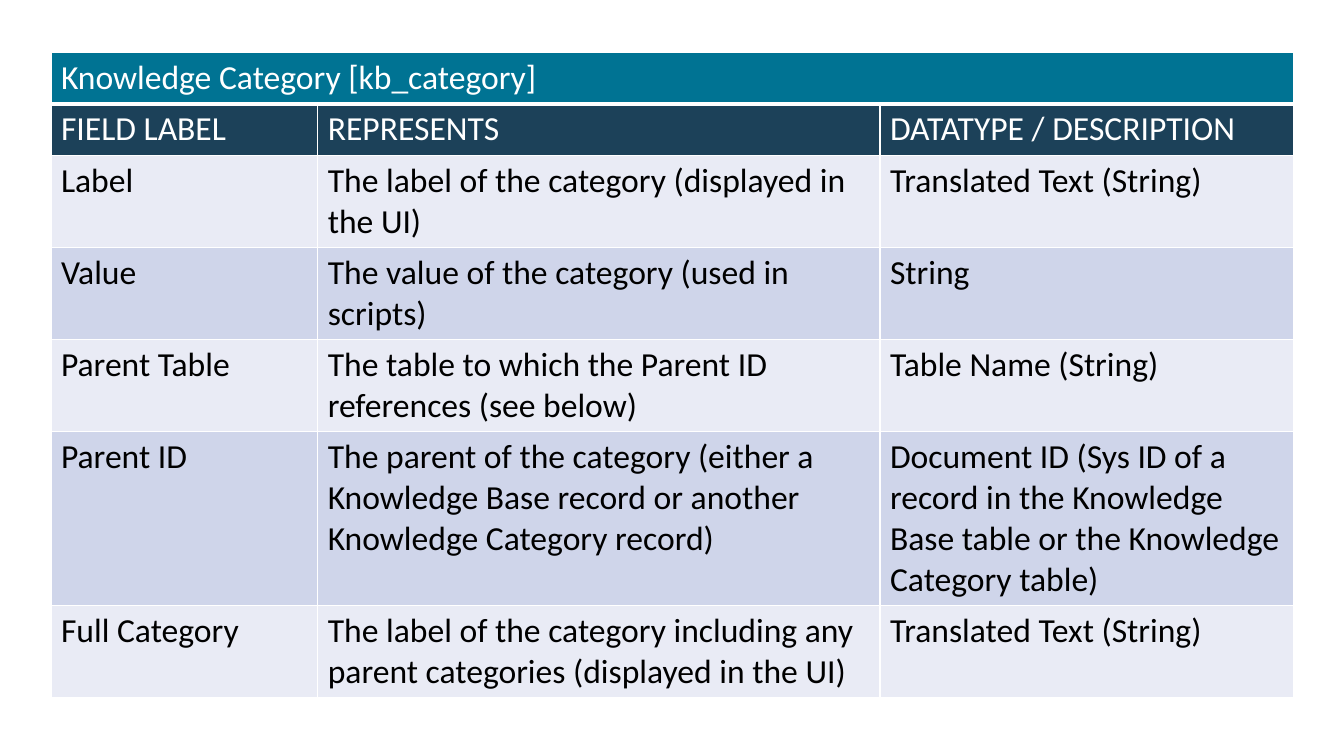
from lxml import etree
from pptx import Presentation
from pptx.dml import color
from pptx.oxml import ns
from pptx.util import Pt

WHITE = color.RGBColor(0xFF, 0xFF, 0xFF)
BLACK = color.RGBColor(0x00, 0x00, 0x00)
TEAL = color.RGBColor(0x00, 0x73, 0x93)
NAVY = color.RGBColor(0x1C, 0x41, 0x59)
PALE = color.RGBColor(0xE9, 0xEB, 0xF5)
LAVENDER = color.RGBColor(0xCF, 0xD5, 0xEA)

TITLE = "Knowledge Category [kb_category]"
HEADINGS = ("FIELD LABEL", "REPRESENTS", "DATATYPE / DESCRIPTION")
FIELDS = (
    ("Label", "The label of the category (displayed in the UI)", "Translated Text (String)"),
    ("Value", "The value of the category (used in scripts)", "String"),
    ("Parent Table", "The table to which the Parent ID references (see below)", "Table Name (String)"),
    (
        "Parent ID",
        "The parent of the category (either a Knowledge Base record or another Knowledge Category record)",
        "Document ID (Sys ID of a record in the Knowledge Base table or the Knowledge Category table)",
    ),
    (
        "Full Category",
        "The label of the category including any parent categories (displayed in the UI)",
        "Translated Text (String)",
    ),
)
COLUMN_WIDTHS = (190.6, 401.6, 295.6)
ROW_HEIGHT = 33.12


class SlideBuilder:
    font_name = "Calibri"
    font_size = Pt(24)

    def __init__(self, slide):
        self.slide = slide

    def borders(self, cell, top, bottom):
        properties = cell._tc.get_or_add_tcPr()
        for side, width in (("L", 1), ("R", 1), ("T", top), ("B", bottom)):
            line = etree.SubElement(properties, ns.qn(f"a:ln{side}"), w=str(Pt(width)))
            fill = etree.SubElement(line, ns.qn("a:solidFill"))
            etree.SubElement(fill, ns.qn("a:srgbClr"), val=str(WHITE))

    def cell(self, cell, wording, background, ink, top=1, bottom=1):
        self.borders(cell, top, bottom)
        cell.fill.solid()
        cell.fill.fore_color.rgb = background
        if not wording:
            return
        run = cell.text_frame.paragraphs[0].add_run()
        run.text = wording
        run.font.name = self.font_name
        run.font.size = self.font_size
        run.font.bold = False
        run.font.color.rgb = ink

    def table(self, left, top, height, widths, row_height, row_count):
        frame = self.slide.shapes.add_table(
            row_count, len(widths), Pt(left), Pt(top), Pt(sum(widths)), Pt(height)
        )
        grid = frame.table
        grid.first_row = False
        grid.horz_banding = False
        for column, width in zip(grid.columns, widths):
            column.width = Pt(width)
        for row in grid.rows:
            row.height = Pt(row_height)
        frame.height = Pt(height)
        return grid


def main():
    deck = Presentation()
    deck.slide_width, deck.slide_height = Pt(960), Pt(540)
    builder = SlideBuilder(deck.slides.add_slide(deck.slide_layouts[6]))
    category = builder.table(36.4, 37.8, 453.6, COLUMN_WIDTHS, ROW_HEIGHT, len(FIELDS) + 2)

    category.cell(0, 0).merge(category.cell(0, 2))
    for column, (wording, heading) in enumerate(zip((TITLE, "", ""), HEADINGS)):
        builder.cell(category.cell(0, column), wording, TEAL, WHITE, bottom=3)
        builder.cell(category.cell(1, column), heading, NAVY, WHITE, top=3)

    for index, field in enumerate(FIELDS):
        band = LAVENDER if index % 2 else PALE
        for column, wording in enumerate(field):
            builder.cell(category.cell(index + 2, column), wording, band, BLACK)

    deck.save("out.pptx")


if __name__ == "__main__":
    main()
